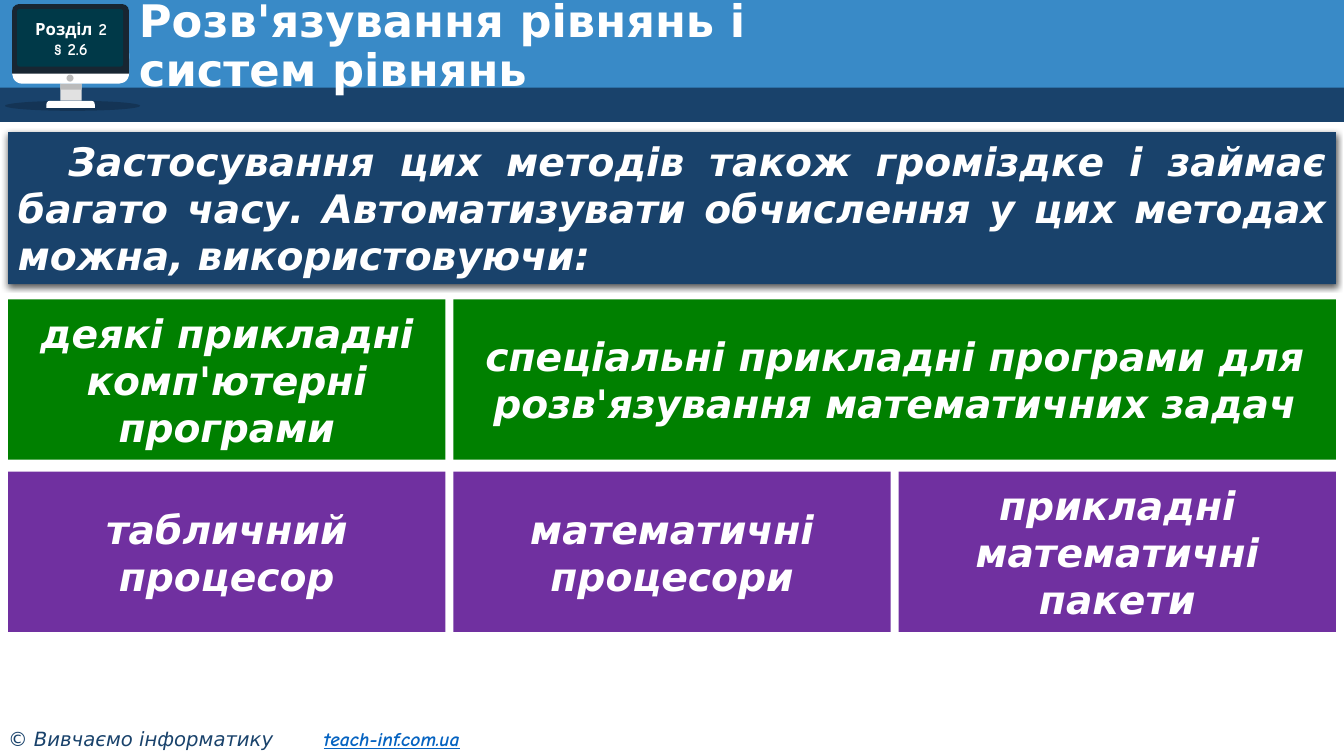
from dataclasses import dataclass

from lxml.etree import SubElement
from pptx import Presentation
from pptx.dml.color import RGBColor
from pptx.enum.shapes import MSO_SHAPE as Preset
from pptx.enum.text import MSO_ANCHOR as Anchor, PP_ALIGN as Align
from pptx.oxml.ns import qn
from pptx.shapes.autoshape import Shape
from pptx.slide import Slide
from pptx.text.text import _Paragraph as Paragraph
from pptx.util import Emu, Inches, Pt

# The slide is a grid of 1333 columns by 750 rows; all places count its cells.
COLUMNS, ROWS = 1333, 750
CELL = Inches(0.01)

MAIN_FONT, HAND_FONT = "DejaVu Sans", "Comic Neue"
WHITE, NAVY, BLUE = "FFFFFF", "19426B", "398AC7"
GREEN, PURPLE, LINK = "008000", "7030A0", "0563C1"

MARGIN = 8
TILE_COLUMNS = 3
TILE_WIDTH = (COLUMNS - MARGIN * (TILE_COLUMNS + 1)) / TILE_COLUMNS
TILE_TOP, TILE_HEIGHT, TILE_PITCH = 297, 159, 171


@dataclass(frozen=True)
class Area:
    left: float
    top: float
    width: float
    height: float

    def lengths(self) -> list[Emu]:
        cells = (self.left, self.top, self.width, self.height)
        return [Emu(round(cell * CELL)) for cell in cells]


@dataclass(frozen=True)
class Part:
    preset: Preset
    area: Area
    fill: str
    corner: float | None = None
    rotation: int = 0
    opacity: int = 100


@dataclass(frozen=True)
class Style:
    size: int
    color: str = WHITE
    font: str = MAIN_FONT
    bold: bool = True
    italic: bool = False
    underline: bool = False


@dataclass(frozen=True)
class Tile:
    text: str
    row: int
    column: int
    fill: str
    span: int = 1

    def area(self) -> Area:
        step = TILE_WIDTH + MARGIN
        return Area(MARGIN + self.column * step, TILE_TOP + self.row * TILE_PITCH,
                    self.span * step - MARGIN, TILE_HEIGHT)


HEADER = (
    Part(Preset.RECTANGLE, Area(0, 0, COLUMNS, 91), BLUE),
    Part(Preset.RECTANGLE, Area(0, 87, COLUMNS, 34), NAVY),
)
MONITOR = (
    Part(Preset.OVAL, Area(5, 100, 134, 10), "000000", opacity=20),
    Part(Preset.RECTANGLE, Area(60, 83, 21, 17), "E1E1E1"),
    Part(Preset.RECTANGLE, Area(60, 83, 21, 6), "BBBBBB"),
    Part(Preset.ROUND_2_SAME_RECTANGLE, Area(46, 100, 48, 7), WHITE, 0.5),
    Part(Preset.ROUND_2_SAME_RECTANGLE, Area(12, 53, 116, 30), WHITE, 0.33, 180),
    Part(Preset.ROUND_2_SAME_RECTANGLE, Area(12, 4, 116, 69), "182632", 0.1),
    Part(Preset.OVAL, Area(66, 74, 7, 7), "BBBBBB"),
    Part(Preset.ROUNDED_RECTANGLE, Area(17, 9, 105, 57), "003948", 0.04),
)
TILES = (
    Tile("деякі прикладні комп'ютерні програми", 0, 0, GREEN),
    Tile("спеціальні прикладні програми для розв'язування математичних задач",
         0, 1, GREEN, span=2),
    Tile("табличний процесор", 1, 0, PURPLE),
    Tile("математичні процесори", 1, 1, PURPLE),
    Tile("прикладні математичні пакети", 1, 2, PURPLE),
)

TITLE_STYLE = Style(32)
BODY_STYLE = Style(28, italic=True)
CHAPTER_STYLE = Style(12, font=HAND_FONT)
FOOTER_STYLE = Style(14, NAVY, bold=False, italic=True)
LINK_STYLE = Style(14, LINK, HAND_FONT, italic=True, underline=True)


def rgb(color: str) -> RGBColor:
    return RGBColor.from_string(color)


def add_part(slide: Slide, part: Part) -> Shape:
    shape = slide.shapes.add_shape(part.preset, *part.area.lengths())
    shape.shadow.inherit = False
    shape.fill.solid()
    shape.fill.fore_color.rgb = rgb(part.fill)
    shape.line.fill.background()
    shape.rotation = part.rotation
    if part.corner is not None:
        shape.adjustments[0] = part.corner
    if part.opacity < 100:
        color = shape._element.spPr.find(qn("a:solidFill"))[0]
        SubElement(color, qn("a:alpha"), val=str(part.opacity * 1000))
    return shape


def add_drop_shadow(shape: Shape) -> None:
    effects = shape._element.spPr.find(qn("a:effectLst"))
    shadow = SubElement(effects, qn("a:outerShdw"), blurRad=str(Pt(4.5)),
                        dist=str(Pt(1.5)), dir="5400000", rotWithShape="0")
    color = SubElement(shadow, qn("a:srgbClr"), val="000000")
    SubElement(color, qn("a:alpha"), val="63000")


def first_paragraph(shape: Shape, anchor: Anchor, align: Align) -> Paragraph:
    """Set up the shape's text frame and return its first paragraph."""
    frame = shape.text_frame
    frame.word_wrap = True
    frame.vertical_anchor = anchor
    paragraph = frame.paragraphs[0]
    paragraph.alignment = align
    return paragraph


def add_run(paragraph: Paragraph, text: str, style: Style) -> None:
    run = paragraph.add_run()
    run.text = text
    font = run.font
    font.name, font.size = style.font, Pt(style.size)
    font.bold, font.italic = style.bold, style.italic
    font.underline = style.underline
    font.color.rgb = rgb(style.color)


def add_title(slide: Slide) -> None:
    box = slide.shapes.add_textbox(*Area(128, 18, 990, 58).lengths())
    paragraph = first_paragraph(box, Anchor.MIDDLE, Align.LEFT)
    paragraph.line_spacing = 0.9
    add_run(paragraph, "Розв'язування рівнянь і", TITLE_STYLE)
    paragraph.add_line_break()
    add_run(paragraph, "систем рівнянь", TITLE_STYLE)


def add_chapter(slide: Slide) -> None:
    box = slide.shapes.add_textbox(*Area(13, 9, 115, 59).lengths())
    paragraph = first_paragraph(box, Anchor.MIDDLE, Align.CENTER)
    add_run(paragraph, "Розділ 2", CHAPTER_STYLE)
    section = box.text_frame.add_paragraph()
    section.alignment = Align.CENTER
    add_run(section, "§ 2.6", CHAPTER_STYLE)


def add_lead(slide: Slide) -> None:
    area = Area(MARGIN, 131, COLUMNS - 2 * MARGIN, 151)
    shape = add_part(slide, Part(Preset.RECTANGLE, area, NAVY))
    add_drop_shadow(shape)
    paragraph = first_paragraph(shape, Anchor.TOP, Align.JUSTIFY)
    paragraph._p.get_or_add_pPr().set("indent", str(Inches(0.5)))
    add_run(paragraph, "Застосування цих методів також громіздке і займає багато часу. "
            "Автоматизувати обчислення у цих методах можна, використовуючи:", BODY_STYLE)


def add_tile(slide: Slide, tile: Tile) -> None:
    shape = add_part(slide, Part(Preset.RECTANGLE, tile.area(), tile.fill))
    paragraph = first_paragraph(shape, Anchor.MIDDLE, Align.CENTER)
    add_run(paragraph, tile.text, BODY_STYLE)


def add_footer(slide: Slide) -> None:
    box = slide.shapes.add_textbox(*Area(0, 716, 521, 34).lengths())
    box.text_frame.margin_left = MARGIN * CELL
    paragraph = first_paragraph(box, Anchor.TOP, Align.LEFT)
    tabs = SubElement(paragraph._p.get_or_add_pPr(), qn("a:tabLst"))
    SubElement(tabs, qn("a:tab"), pos=str(Inches(3.13)), algn="l")
    add_run(paragraph, "© Вивчаємо інформатику\t", FOOTER_STYLE)
    add_run(paragraph, "teach-inf.com.ua", LINK_STYLE)


def main() -> None:
    presentation = Presentation()
    presentation.slide_width = COLUMNS * CELL
    presentation.slide_height = ROWS * CELL
    slide = presentation.slides.add_slide(presentation.slide_layouts[6])
    for part in HEADER + MONITOR:
        add_part(slide, part)
    add_footer(slide)
    add_chapter(slide)
    add_title(slide)
    add_lead(slide)
    for tile in TILES:
        add_tile(slide, tile)
    presentation.save("out.pptx")


if __name__ == "__main__":
    main()
